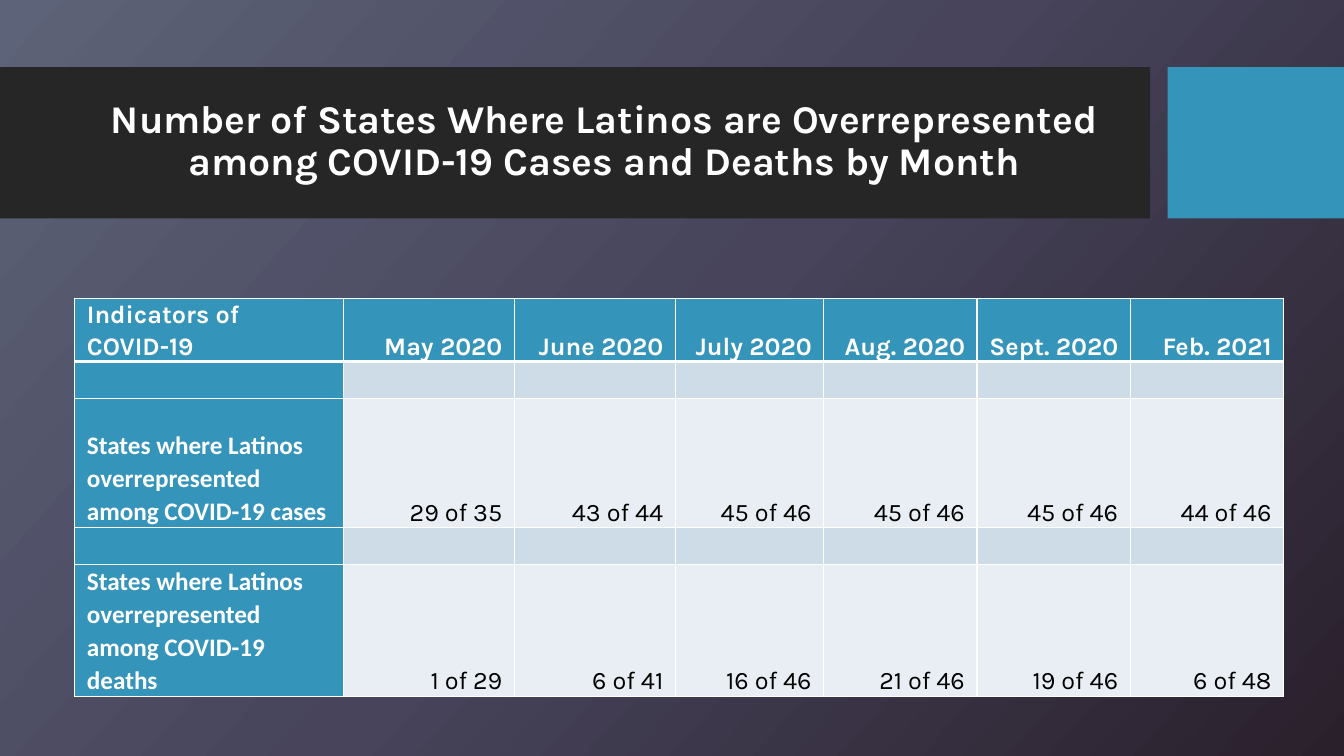
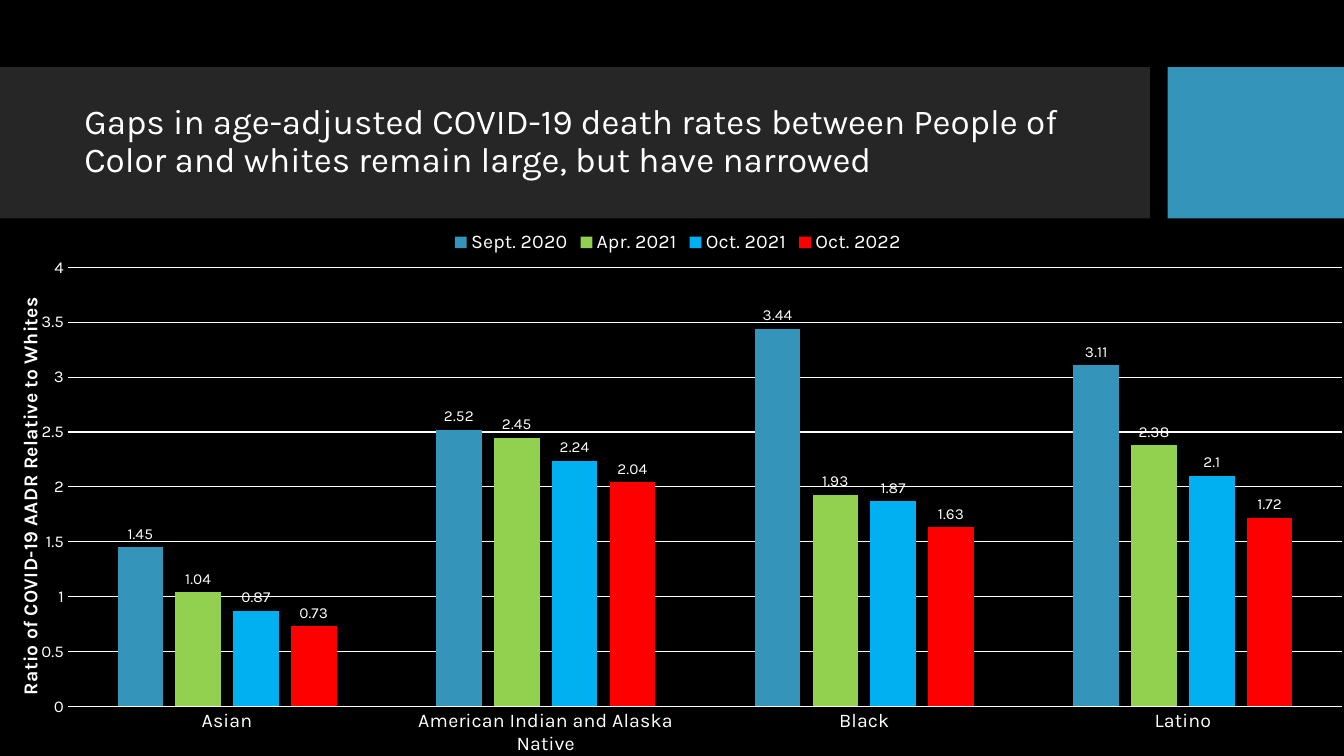
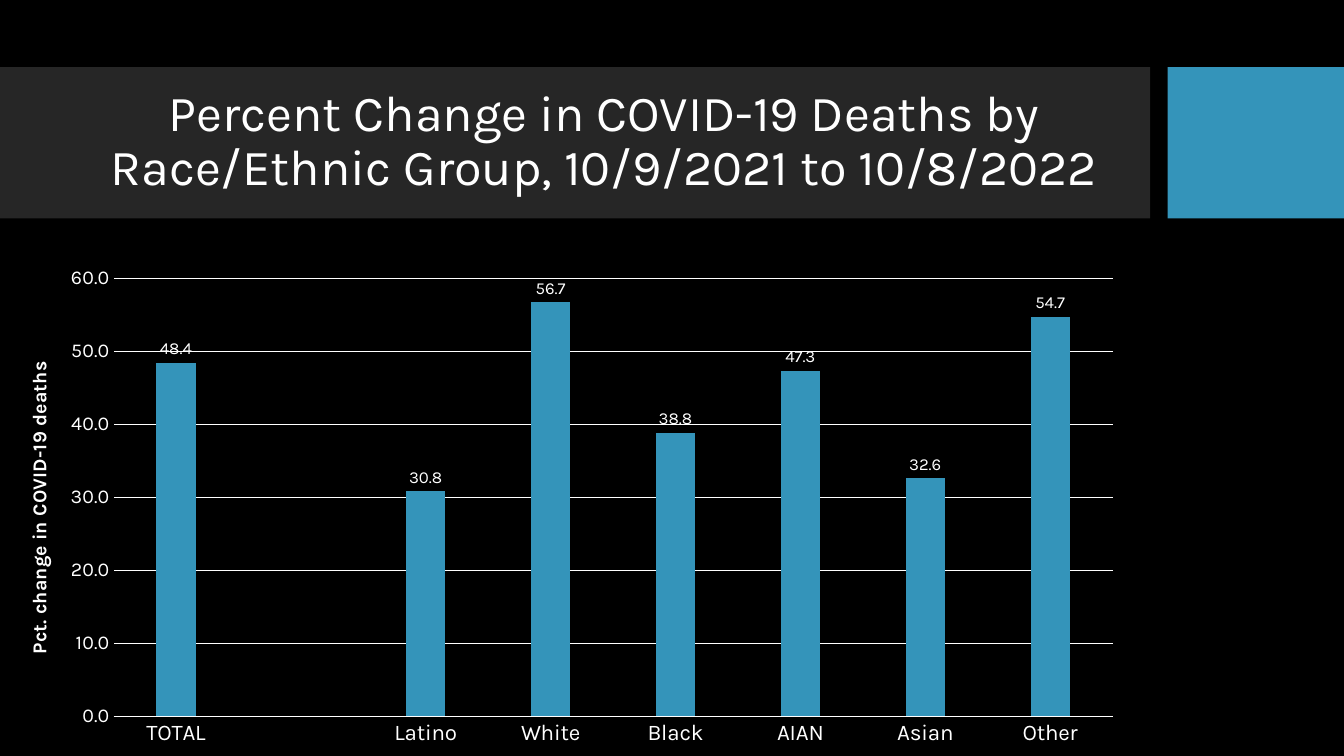
from copy import deepcopy

from lxml.etree import SubElement
from pptx import Presentation
from pptx.chart.data import CategoryChartData
from pptx.dml.color import RGBColor
from pptx.enum.chart import XL_CHART_TYPE as CHART, XL_LABEL_POSITION as LABEL
from pptx.enum.chart import XL_LEGEND_POSITION as LEGEND, XL_TICK_MARK as TICK
from pptx.enum.shapes import MSO_SHAPE as SHAPE
from pptx.enum.text import MSO_ANCHOR as ANCHOR, MSO_AUTO_SIZE as AUTO_SIZE
from pptx.enum.text import PP_ALIGN as ALIGN
from pptx.oxml.ns import qn
from pptx.util import Pt

WHITE = RGBColor(0xFF, 0xFF, 0xFF)
BLACK = RGBColor(0, 0, 0)
CHARCOAL = RGBColor(0x26, 0x26, 0x26)
TEAL = RGBColor(0x34, 0x94, 0xBA)
GREEN = RGBColor(0x92, 0xD0, 0x50)
SKY = RGBColor(0x00, 0xB0, 0xF0)
RED = RGBColor(0xFF, 0, 0)
SPACER = RGBColor(0xCE, 0xDC, 0xE7)
PALE = RGBColor(0xE8, 0xEE, 0xF3)
GRADIENT = [(0, RGBColor(0x5D, 0x63, 0x78)), (0.5, RGBColor(0x47, 0x44, 0x5B)),
            (1, RGBColor(0x2A, 0x20, 0x2C))]
FONT = "Karla"
LABEL_FONT = "Calibri"

BAND_TOP, BAND_HEIGHT = 48, 108
BANDS = [(0, 821.5, CHARCOAL), (834, 126, TEAL)]
TITLE_BOX = (53, 59, 757, 85)


def place(shape, box):
    shape.left, shape.top, shape.width, shape.height = map(Pt, box)


def style_font(font, size, color=WHITE, bold=False, name=FONT):
    font.name, font.size, font.bold = name, Pt(size), bold
    font.color.rgb = color


def solid(fill, color):
    fill.solid()
    fill.fore_color.rgb = color


def prepare_layout(prs, layout):
    """Put the black ground, the bands and the title box on the layout."""
    solid(layout.background.fill, BLACK)
    place(layout.placeholders[0], TITLE_BOX)
    for sp in list(layout.placeholders)[1:]:
        layout.shapes.element.remove(sp.element)
    return layout


def add_bands(slide, layout):
    """Draw the bands and move them to the layout, behind its title."""
    for i, (left, width, color) in enumerate(BANDS):
        sp = slide.shapes.add_shape(SHAPE.RECTANGLE, Pt(left), Pt(BAND_TOP),
                                    Pt(width), Pt(BAND_HEIGHT))
        sp.shadow.inherit = False
        solid(sp.fill, color)
        sp.line.fill.background()
        layout.shapes.element.insert(2 + i, sp.element)


def add_slide(prs, layout, title, size, align=ALIGN.CENTER, bold=False):
    slide = prs.slides.add_slide(layout)
    tf = slide.shapes.title.text_frame
    tf.text = title
    tf.word_wrap = True
    tf.auto_size = AUTO_SIZE.NONE
    tf.vertical_anchor = ANCHOR.MIDDLE
    p = tf.paragraphs[0]
    p.alignment, p.line_spacing = align, 0.9
    style_font(p.font, size, bold=bold)
    return slide


def gradient_background(slide):
    fill = slide.background.fill
    fill.gradient()
    fill.gradient_angle = 318
    stop_list = slide.element.find(".//" + qn("a:gsLst"))
    stop_list.append(deepcopy(stop_list[-1]))
    for stop, (position, color) in zip(fill.gradient_stops, GRADIENT):
        stop.position = position
        stop.color.rgb = color


def set_borders(cell, top, bottom):
    """Draw white cell borders; top and bottom are widths in points."""
    props = cell._tc.get_or_add_tcPr()
    for i, (side, width) in enumerate([("L", 1), ("R", 1), ("T", top), ("B", bottom)]):
        line = SubElement(props, qn("a:ln" + side), w=str(Pt(width)))
        fill = SubElement(line, qn("a:solidFill"))
        SubElement(fill, qn("a:srgbClr"), val=str(WHITE))
        props.insert(i, line)


def add_state_table(slide, box, rows, widths, heights):
    table = slide.shapes.add_table(len(rows), len(widths), *map(Pt, box)).table
    for column, width in zip(table.columns, widths):
        column.width = Pt(width)
    for r, (row, height) in enumerate(zip(rows, heights)):
        table.rows[r].height = Pt(height)
        for c in range(len(widths)):
            cell = table.cell(r, c)
            is_head = r == 0 or c == 0
            solid(cell.fill, TEAL if is_head else PALE if row else SPACER)
            set_borders(cell, 3 if r == 1 else 1, 3 if r == 0 else 1)
            cell.margin_left = cell.margin_right = Pt(8.6)
            cell.margin_top = cell.margin_bottom = 0
            cell.vertical_anchor = ANCHOR.BOTTOM
            p = cell.text_frame.paragraphs[0]
            if row:
                p.text = row[c]
                p.line_spacing = 1.07
            p.alignment = ALIGN.RIGHT if c else ALIGN.LEFT
            style_font(p.font, 18, WHITE if is_head else BLACK, is_head,
                       LABEL_FONT if r and not c else FONT)
    table.cell(len(rows) - 1, 0).vertical_anchor = ANCHOR.TOP


def set_layout(parent, **fractions):
    """Fix a chart part's place, in fractions of the chart."""
    layout = parent.find(qn("c:layout"))
    if layout is None:
        layout = SubElement(parent, qn("c:layout"))
        parent.insert(0, layout)
    manual = SubElement(layout, qn("c:manualLayout"))
    if "w" in fractions:
        SubElement(manual, qn("c:layoutTarget"), val="inner")
    for axis in "xy":
        SubElement(manual, qn(f"c:{axis}Mode"), val="edge")
    for key, value in fractions.items():
        SubElement(manual, qn("c:" + key), val=str(value))


def style_value_axis(axis, title, title_at, size, top, step, number_format):
    axis.minimum_scale, axis.maximum_scale, axis.major_unit = 0, top, step
    axis.major_tick_mark = TICK.NONE
    axis.format.line.fill.background()
    grid = axis.major_gridlines.format.line
    solid(grid.fill, WHITE)
    grid.width = Pt(0.75)
    style_font(axis.tick_labels.font, size)
    axis.tick_labels.number_format = number_format
    axis.tick_labels.number_format_is_linked = False
    tf = axis.axis_title.text_frame
    tf.text = title
    style_font(tf.paragraphs[0].font, 14, bold=True)
    element = axis.axis_title.element
    body = element.find(".//" + qn("a:bodyPr"))
    body.set("rot", "-5400000")
    body.set("vert", "horz")
    set_layout(element, x=title_at[0], y=title_at[1])


def add_column_chart(slide, box, categories, series, plot_at, category_size,
                     label_size, number_format, **value_axis):
    data = CategoryChartData()
    data.categories = categories
    for name, _, values in series:
        data.add_series(name, values)
    chart = slide.shapes.add_chart(CHART.COLUMN_CLUSTERED, *map(Pt, box), data).chart
    style_font(chart.font, label_size)
    chart.has_title = False
    chart.has_legend = len(series) > 1
    if chart.has_legend:
        chart.legend.position = LEGEND.TOP
        chart.legend.include_in_layout = False
        style_font(chart.legend.font, 14)

    axis = chart.category_axis
    axis.major_tick_mark = TICK.NONE
    solid(axis.format.line.fill, WHITE)
    axis.format.line.width = Pt(0.75)
    style_font(axis.tick_labels.font, category_size)
    style_value_axis(chart.value_axis, number_format=number_format, **value_axis)

    plot = chart.plots[0]
    plot.gap_width, plot.overlap, plot.vary_by_categories = 219, -27, False
    for bars, (_, color, _) in zip(plot.series, series):
        solid(bars.format.fill, color)
        labels = bars.data_labels
        labels.show_value = True
        labels.position = LABEL.OUTSIDE_END
        labels.number_format = number_format
        labels.number_format_is_linked = False
        style_font(labels.font, label_size)
    set_layout(chart.element.find(".//" + qn("c:plotArea")),
               **dict(zip("xywh", plot_at)))


def main():
    prs = Presentation()
    prs.slide_width, prs.slide_height = Pt(960), Pt(540)
    layout = prepare_layout(prs, prs.slide_layouts[5])

    slide = add_slide(prs, layout, "Number of States Where Latinos are Overrepresented "
                      "among COVID-19 Cases and Deaths by Month", 28, bold=True)
    add_bands(slide, layout)
    gradient_background(slide)
    add_state_table(
        slide, (53.5, 213, 863.5, 282),
        [["Indicators of COVID-19", "May 2020", "June 2020", "July 2020",
          "Aug. 2020", "Sept. 2020", "Feb. 2021"],
         [],
         ["States where Latinos overrepresented among COVID-19 cases",
          "29 of 35", "43 of 44", "45 of 46", "45 of 46", "45 of 46", "44 of 46"],
         [],
         ["States where Latinos overrepresented among COVID-19 deaths",
          "1 of 29", "6 of 41", "16 of 46", "21 of 46", "19 of 46", "6 of 48"]],
        widths=[192, 122, 115, 106, 109.5, 109.5, 109.5],
        heights=[26.6, 26.6, 92, 26.6, 73.4])

    slide = add_slide(prs, layout, "Gaps in age-adjusted COVID-19 death rates between "
                      "People of Color and whites remain large, but have narrowed",
                      25, ALIGN.LEFT)
    add_column_chart(
        slide, (0, 157, 968.5, 383),
        ["Asian", "American Indian and Alaska Native", "Black", "Latino"],
        [("Sept. 2020", TEAL, [1.45, 2.52, 3.44, 3.11]),
         ("Apr. 2021", GREEN, [1.04, 2.45, 1.93, 2.38]),
         ("Oct. 2021", SKY, [0.87, 2.24, 1.87, 2.1]),
         ("Oct. 2022", RED, [0.73, 2.04, 1.63, 1.72])],
        plot_at=(0.05, 0.09, 0.94, 0.83), category_size=14, label_size=11,
        number_format="General", title="Ratio of COVID-19 AADR Relative to Whites",
        title_at=(0.01, 0.15), size=12, top=4, step=0.5)

    slide = add_slide(prs, layout, "Percent Change in COVID-19 Deaths by "
                      "Race/Ethnic Group, 10/9/2021 to 10/8/2022", 36)
    add_column_chart(
        slide, (0, 184.5, 811, 355.5),
        ["TOTAL", "", "Latino", "White", "Black", "AIAN", "Asian", "Other"],
        [("Series 1", TEAL, [48.4, None, 30.8, 56.7, 38.8, 47.3, 32.6, 54.7])],
        plot_at=(0.1, 0.04, 0.88, 0.88), category_size=16, label_size=12,
        number_format="0.0", title="Pct. change in COVID-19 deaths",
        title_at=(0.02, 0.2), size=14, top=60, step=10)

    prs.save("out.pptx")


if __name__ == "__main__":
    main()
